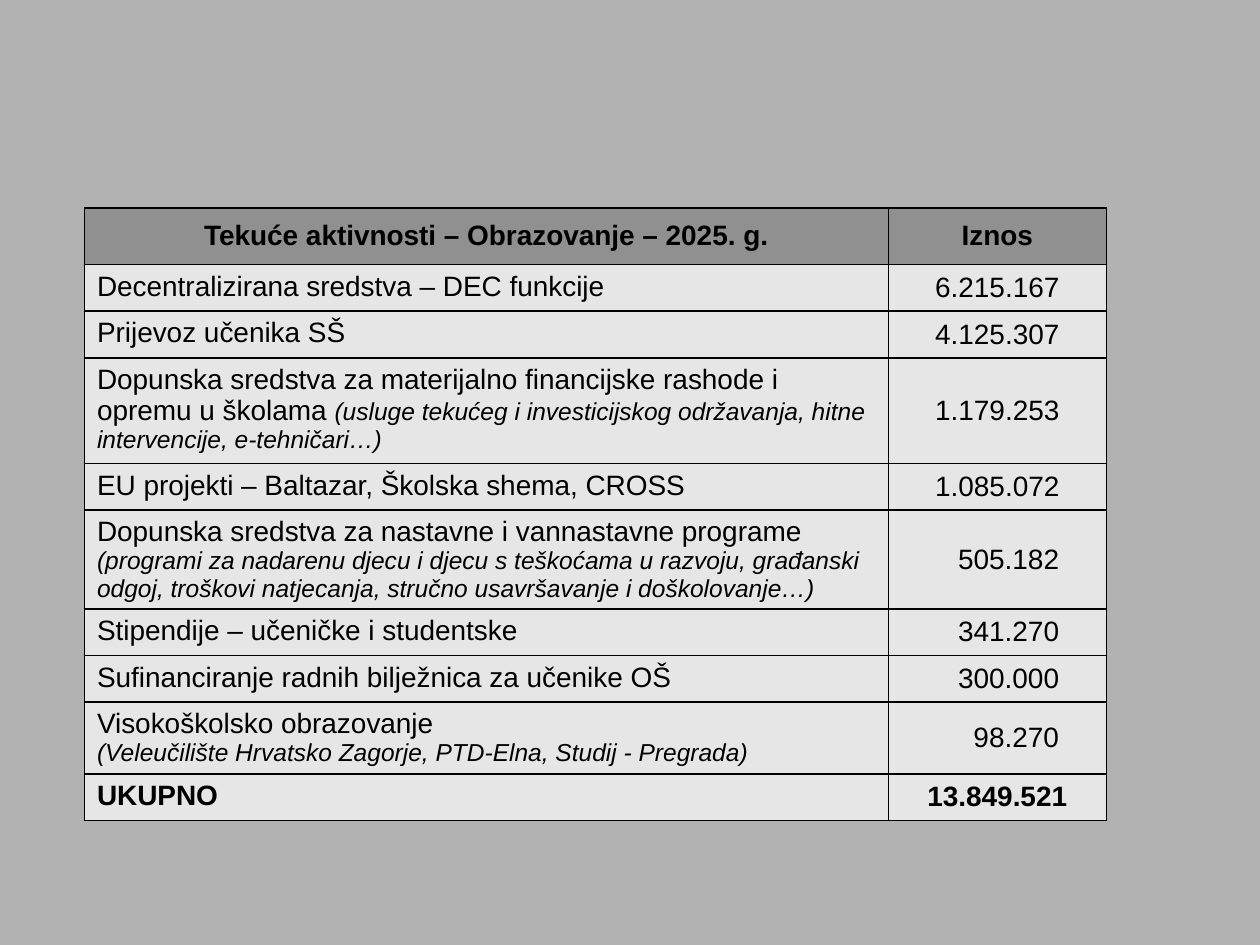
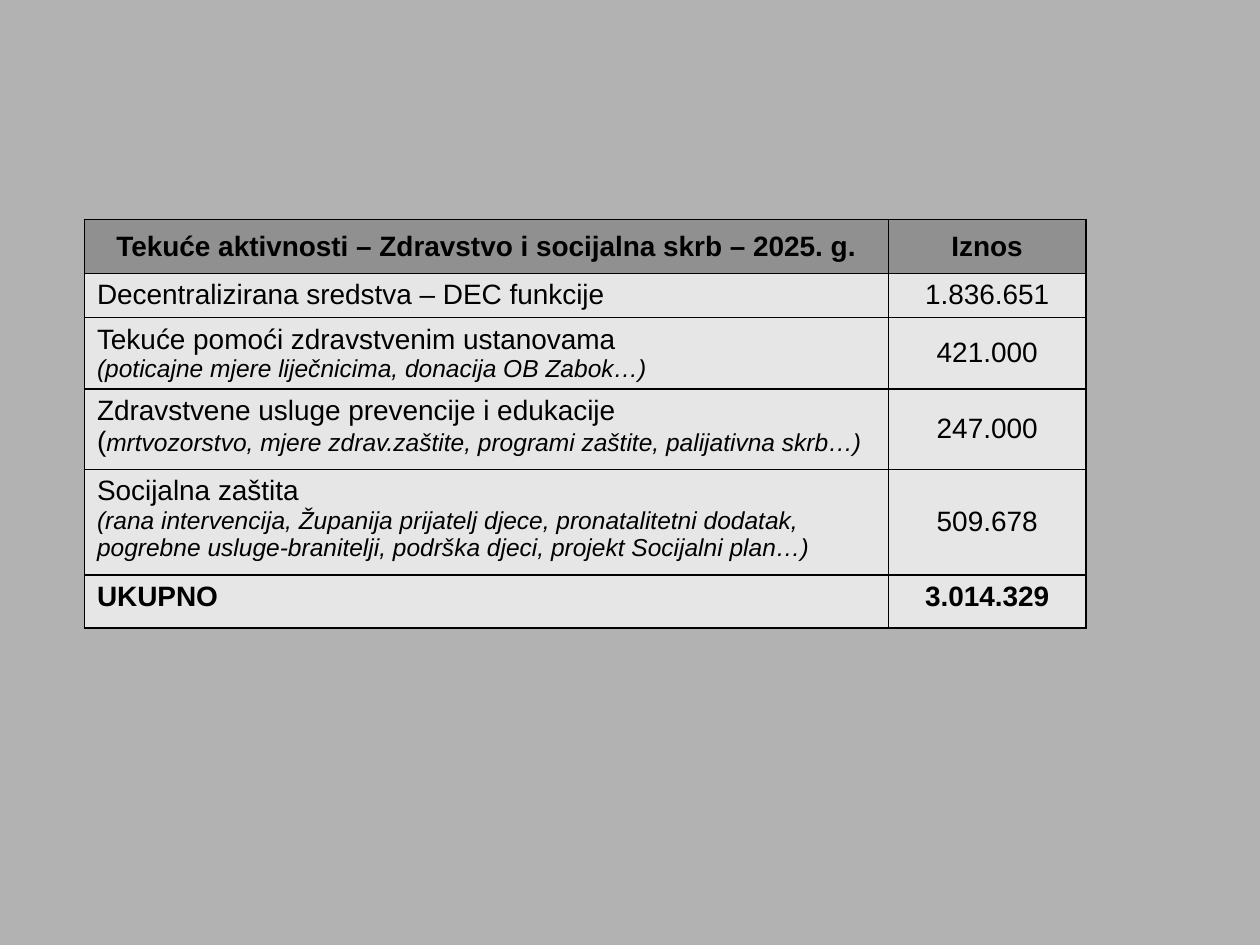
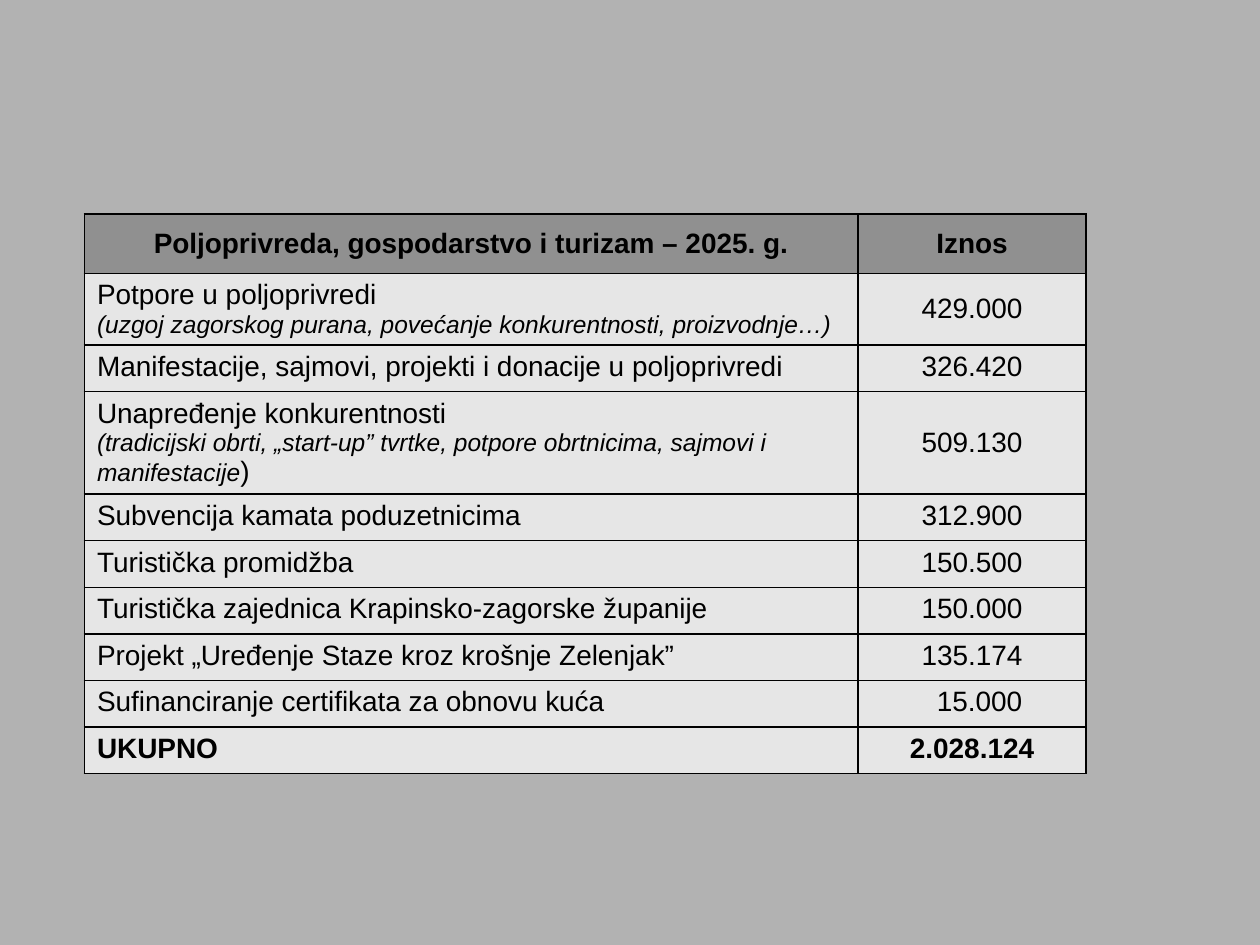
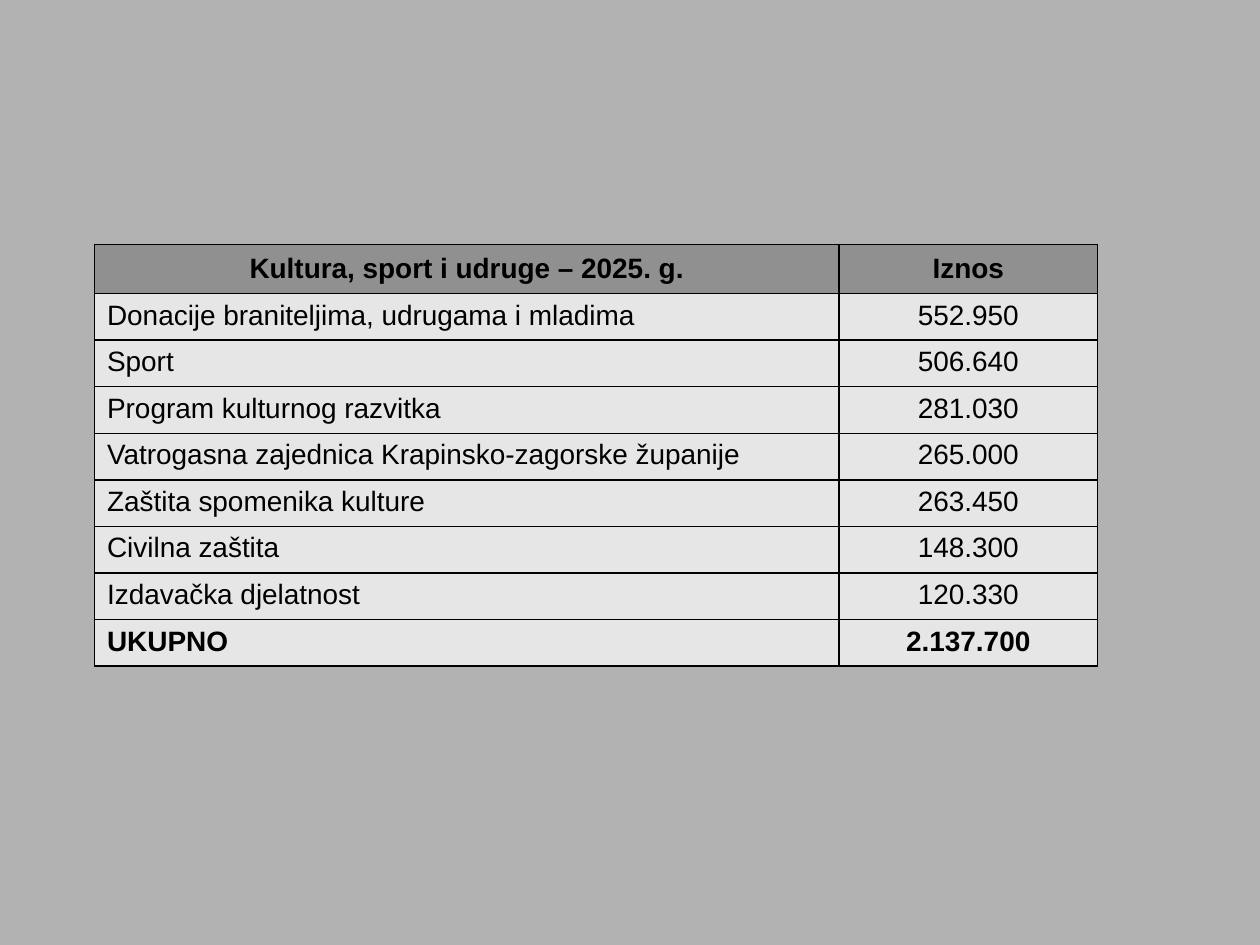
from lxml.etree import SubElement
from pptx import Presentation
from pptx.dml.color import RGBColor
from pptx.enum.text import MSO_ANCHOR, PP_ALIGN
from pptx.oxml.ns import qn
from pptx.util import Inches, Pt

BACKGROUND = RGBColor(0xB2, 0xB2, 0xB2)
HEADER_FILL = RGBColor(0x90, 0x90, 0x90)
BODY_FILL = RGBColor(0xE6, 0xE6, 0xE6)
BLACK = RGBColor(0, 0, 0)

FONT = "Arial"
TEXT_SIZE = Pt(16)
NOTE_SIZE = Pt(14)
ROW_HEIGHT = 0.37
CELL_MARGIN = 0.1
DIGIT_WIDTH = 0.12
DOT_WIDTH = 0.06
AMOUNT_HEADING = "Iznos"
TOTAL_LABEL = "UKUPNO"

# Text between underscores is a note in smaller italics.
BUDGETS = [
    {
        "title": "Tekuće aktivnosti – Obrazovanje – 2025. g.",
        "at": (0.67, 1.65), "columns": (6.38, 1.73),
        "header_height": 0.45, "heights": {3: 0.84, 5: 0.78, 8: 0.57},
        "anchor": MSO_ANCHOR.MIDDLE, "align_digits": True,
        "rows": [
            ("Decentralizirana sredstva – DEC funkcije", "6.215.167"),
            ("Prijevoz učenika SŠ", "4.125.307"),
            ("Dopunska sredstva za materijalno financijske rashode i opremu u školama "
             "_(usluge tekućeg i investicijskog održavanja, hitne intervencije, "
             "e-tehničari…)_", "1.179.253"),
            ("EU projekti – Baltazar, Školska shema, CROSS", "1.085.072"),
            ("Dopunska sredstva za nastavne i vannastavne programe\n"
             "_(programi za nadarenu djecu i djecu s teškoćama u razvoju, građanski odgoj, "
             "troškovi natjecanja, stručno usavršavanje i doškolovanje…)_", "505.182"),
            ("Stipendije – učeničke i studentske", "341.270"),
            ("Sufinanciranje radnih bilježnica za učenike OŠ", "300.000"),
            ("Visokoškolsko obrazovanje\n"
             "_(Veleučilište Hrvatsko Zagorje, PTD-Elna, Studij - Pregrada)_", "98.270"),
        ],
        "total": "13.849.521",
    },
    {
        "title": "Tekuće aktivnosti – Zdravstvo i socijalna skrb – 2025. g.",
        "at": (0.67, 1.74), "columns": (6.38, 1.57),
        "header_height": 0.43, "heights": {1: 0.35, 2: 0.56, 3: 0.64, 4: 0.84, 5: 0.42},
        "anchor": MSO_ANCHOR.TOP, "align_digits": False,
        "rows": [
            ("Decentralizirana sredstva – DEC funkcije", "1.836.651"),
            ("Tekuće pomoći zdravstvenim ustanovama\n"
             "_(poticajne mjere liječnicima, donacija OB Zabok…)_", "421.000"),
            ("Zdravstvene usluge prevencije i edukacije\n"
             "(_mrtvozorstvo, mjere zdrav.zaštite, programi zaštite, palijativna skrb…)_",
             "247.000"),
            ("Socijalna zaštita\n"
             "_(rana intervencija, Županija prijatelj djece, pronatalitetni dodatak, "
             "pogrebne usluge-branitelji, podrška djeci, projekt Socijalni plan…)_",
             "509.678"),
        ],
        "total": "3.014.329",
    },
    {
        "title": "Poljoprivreda, gospodarstvo i turizam – 2025. g.",
        "at": (0.67, 1.7), "columns": (6.14, 1.81),
        "header_height": 0.47, "heights": {1: 0.57, 3: 0.81},
        "anchor": MSO_ANCHOR.TOP, "align_digits": True,
        "rows": [
            ("Potpore u poljoprivredi\n"
             "_(uzgoj zagorskog purana, povećanje konkurentnosti, proizvodnje…)_", "429.000"),
            ("Manifestacije, sajmovi, projekti i donacije u poljoprivredi", "326.420"),
            ("Unapređenje konkurentnosti\n"
             "_(tradicijski obrti, „start-up” tvrtke, potpore obrtnicima, sajmovi i "
             "manifestacije_)", "509.130"),
            ("Subvencija kamata poduzetnicima", "312.900"),
            ("Turistička promidžba", "150.500"),
            ("Turistička zajednica Krapinsko-zagorske županije", "150.000"),
            ("Projekt „Uređenje Staze kroz krošnje Zelenjak”", "135.174"),
            ("Sufinanciranje certifikata za obnovu kuća", "15.000"),
        ],
        "total": "2.028.124",
    },
    {
        "title": "Kultura, sport i udruge – 2025. g.",
        "at": (0.75, 1.94), "columns": (5.91, 2.05),
        "header_height": 0.39, "heights": {},
        "anchor": MSO_ANCHOR.TOP, "align_digits": True,
        "rows": [
            ("Donacije braniteljima, udrugama i mladima", "552.950"),
            ("Sport", "506.640"),
            ("Program kulturnog razvitka", "281.030"),
            ("Vatrogasna zajednica Krapinsko-zagorske županije", "265.000"),
            ("Zaštita spomenika kulture", "263.450"),
            ("Civilna zaštita", "148.300"),
            ("Izdavačka djelatnost", "120.330"),
        ],
        "total": "2.137.700",
    },
]


def add_borders(cell):
    properties = cell._tc.get_or_add_tcPr()
    for position, side in enumerate(("lnL", "lnR", "lnT", "lnB")):
        line = SubElement(properties, qn(f"a:{side}"), w=str(Pt(1)))
        properties.insert(position, line)
        fill = SubElement(line, qn("a:solidFill"))
        SubElement(fill, qn("a:srgbClr"), val=str(BLACK))


def write_cell(cell, text, fill, bold=False, alignment=PP_ALIGN.LEFT, anchor=MSO_ANCHOR.TOP):
    cell.fill.solid()
    cell.fill.fore_color.rgb = fill
    cell.vertical_anchor = anchor
    add_borders(cell)
    for number, line in enumerate(text.split("\n")):
        frame = cell.text_frame
        paragraph = frame.add_paragraph() if number else frame.paragraphs[0]
        paragraph.alignment = alignment
        for part, words in enumerate(line.split("_")):
            if not words:
                continue
            is_note = part % 2 == 1
            run = paragraph.add_run()
            run.text = words
            run.font.color.rgb = BLACK
            font_format = {"name": FONT, "size": NOTE_SIZE if is_note else TEXT_SIZE,
                           "bold": bold, "italic": is_note}
            for name, value in font_format.items():
                setattr(run.font, name, value)


def digit_indent(amount, widest):
    dots = widest.count(".") - amount.count(".")
    digits = len(widest) - len(amount) - dots
    return digits * DIGIT_WIDTH + dots * DOT_WIDTH


def add_budget(slide, budget):
    rows = [(budget["title"], AMOUNT_HEADING), *budget["rows"], (TOTAL_LABEL, budget["total"])]
    heights = [budget["heights"].get(row, ROW_HEIGHT) for row in range(len(rows))]
    heights[0] = budget["header_height"]
    widest = max((amount for _, amount in budget["rows"]), key=len)
    left, top = budget["at"]
    table = slide.shapes.add_table(
        len(rows), 2, Inches(left), Inches(top),
        Inches(sum(budget["columns"])), Inches(sum(heights))).table
    for column, width in zip(table.columns, budget["columns"]):
        column.width = Inches(width)

    for index, (label, amount) in enumerate(rows):
        table.rows[index].height = Inches(heights[index])
        is_header = index == 0
        is_total = index == len(rows) - 1
        fill = HEADER_FILL if is_header else BODY_FILL
        bold = is_header or is_total
        middle = is_header or "_" in label
        label_cell, amount_cell = table.cell(index, 0), table.cell(index, 1)
        write_cell(label_cell, label, fill, bold,
                   PP_ALIGN.CENTER if is_header else PP_ALIGN.LEFT,
                   MSO_ANCHOR.MIDDLE if is_header else MSO_ANCHOR.TOP)
        write_cell(amount_cell, amount, fill, bold, PP_ALIGN.CENTER,
                   MSO_ANCHOR.MIDDLE if middle else budget["anchor"])
        if budget["align_digits"] and not bold:
            amount_cell.margin_left = Inches(CELL_MARGIN + digit_indent(amount, widest))


def main():
    presentation = Presentation()
    presentation.slide_width = Inches(10)
    presentation.slide_height = Inches(7.5)
    background = presentation.slide_master.background.fill
    background.solid()
    background.fore_color.rgb = BACKGROUND
    for budget in BUDGETS:
        add_budget(presentation.slides.add_slide(presentation.slide_layouts[6]), budget)
    presentation.save("out.pptx")


if __name__ == "__main__":
    main()
